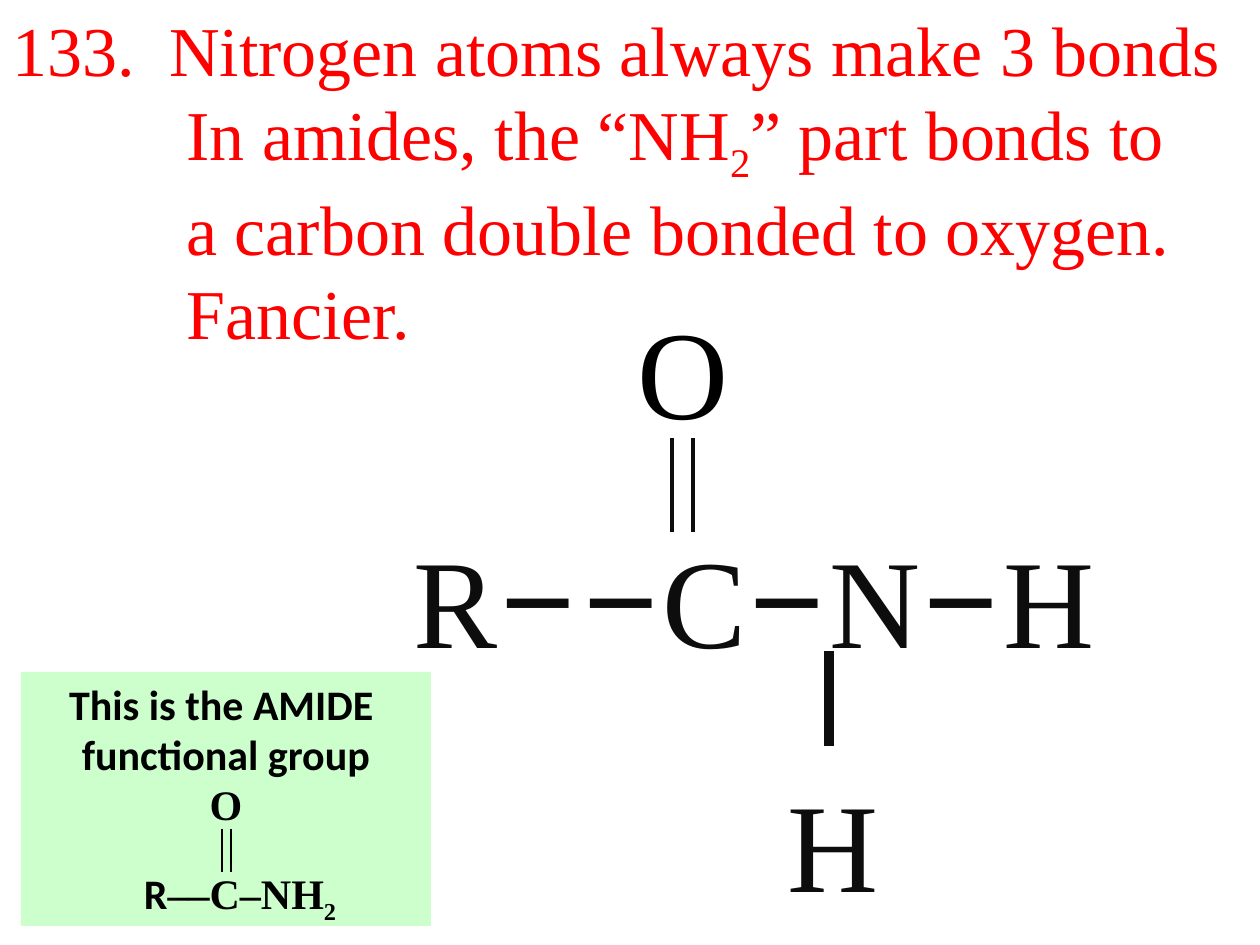
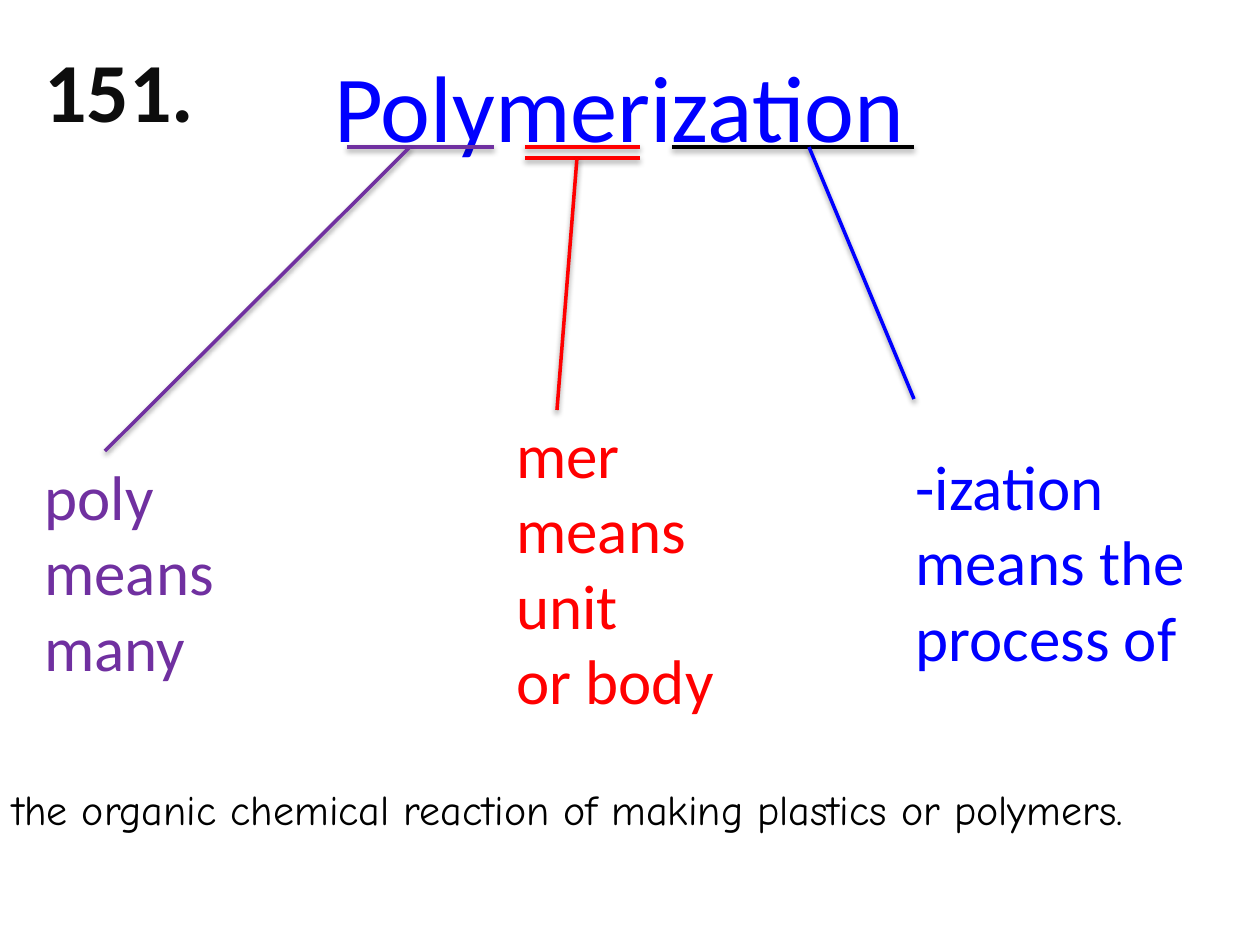
from lxml.etree import SubElement
from pptx import Presentation
from pptx.dml.color import RGBColor
from pptx.enum.shapes import MSO_CONNECTOR, MSO_SHAPE
from pptx.enum.text import MSO_ANCHOR, PP_ALIGN
from pptx.oxml.ns import qn
from pptx.util import Pt

PX = 914400 / 126
COLORS = {
    "red": "FF0000", "blue": "0000FF", "purple": "7030A0",
    "black": "000000", "ink": "0D0D0D", "mint": "CCFFCC",
}
SERIF, SANS, DASH, HAND = "Times New Roman", "Calibri", "Roboto", "Comic Neue"
SUB = {"sub": True}

RULE = [
    {"runs": ["133.\tNitrogen atoms always make 3 bonds"], "left": 157, "hang": 157},
    {"runs": ["In amides, the “NH", ("2", SUB), "” part bonds to"], "left": 174},
    {"runs": ["a carbon double bonded to oxygen."], "left": 174},
    {"runs": ["Fancier."], "left": 174},
]
CHAIN = [{"runs": ["R", ("––", {"font": DASH}), "C", ("–", {"font": DASH}),
                   "N", ("–", {"font": DASH}), "H"]}]
GROUP_CARD = [
    {"runs": ["This is the AMIDE "]},
    {"runs": ["functional group"]},
    {"runs": [("O", {"font": SERIF})]},
    {"runs": ["R", ("––C–NH", {"font": SERIF}), ("2", {"font": SERIF, "sub": True})],
     "left": 28, "before": 22},
]
AMIDE_BONDS = [
    ((829, 651), (829, 746), "ink", 6),
    ((222, 829), (222, 872), "black", 1.5),
    ((231, 829), (231, 872), "black", 1.5),
    ((672, 438), (672, 532), "ink", 2.25),
    ((693, 438), (693, 532), "ink", 2.25),
]

WORD_PARTS = [
    (["poly", "means many"], (32, 451, 336, 242), "purple"),
    (["mer", "means", "unit", "or body"], (504, 409, 252, 318), "red"),
    (["-ization", "means the", "process of"], (903, 441, 305, 242), "blue"),
]
WORD_LINES = [
    ((347, 147), (494, 147), "purple"),
    ((410, 147), (105, 451), "purple"),
    ((525, 147), (640, 147), "red"),
    ((525, 158), (640, 158), "red"),
    ((577, 158), (557, 410), "red"),
    ((672, 147), (914, 147), "black"),
    ((809, 147), (914, 399), "blue"),
]


def px(n):
    return round(n * PX)


def rgb(name):
    return RGBColor.from_string(COLORS[name])


def write(s, lines, box, size, font=SERIF, color="black", bold=False,
          align=PP_ALIGN.LEFT, fill=None):
    place = [px(n) for n in box]
    if fill:
        sp = s.shapes.add_shape(MSO_SHAPE.RECTANGLE, *place)
        sp.shadow.inherit = False
        sp.fill.solid()
        sp.fill.fore_color.rgb = rgb(fill)
        sp.line.fill.background()
    else:
        sp = s.shapes.add_textbox(*place)
    tf = sp.text_frame
    tf.word_wrap = True
    tf.vertical_anchor = MSO_ANCHOR.TOP
    for i, line in enumerate(lines):
        if isinstance(line, str):
            line = {"runs": [line]}
        p = tf.add_paragraph() if i else tf.paragraphs[0]
        p.alignment = align
        p.space_before = Pt(line.get("before", 0))
        pPr = p._p.get_or_add_pPr()
        pPr.set("marL", str(px(line.get("left", 0))))
        pPr.set("indent", str(-px(line.get("hang", 0))))
        for part in line["runs"]:
            text, fmt = (part, {}) if isinstance(part, str) else part
            r = p.add_run()
            r.text = text
            r.font.size = Pt(size)
            r.font.name = fmt.get("font", font)
            r.font.bold = bold
            r.font.color.rgb = rgb(color)
            if fmt.get("sub"):
                r.font._element.set("baseline", "-25000")


def draw_line(s, start, end, color, width=2, shadow=False):
    ln = s.shapes.add_connector(MSO_CONNECTOR.STRAIGHT, *[px(n) for n in start + end])
    ln.line.color.rgb = rgb(color)
    ln.line.width = Pt(width)
    effects = SubElement(ln._element.spPr, qn("a:effectLst"))
    if shadow:
        sh = SubElement(effects, qn("a:outerShdw"), blurRad="40000", dist="20000",
                        dir="5400000", rotWithShape="0")
        clr = SubElement(sh, qn("a:srgbClr"), val=COLORS["black"])
        SubElement(clr, qn("a:alpha"), val="38000")


def build_amide(s):
    write(s, RULE, (0, 0, 1260, 360), 40, color="red")
    write(s, CHAIN, (401, 516, 760, 165), 72, color="ink")
    write(s, ["H"], (775, 760, 120, 165), 72, color="ink")
    write(s, GROUP_CARD, (21, 672, 410, 254), 24, font=SANS, bold=True,
          align=PP_ALIGN.CENTER, fill="mint")
    write(s, ["O"], (625, 287, 120, 165), 72)
    for bond in AMIDE_BONDS:
        draw_line(s, *bond)


def build_polymerization(s):
    write(s, ["Polymerization "], (42, 42, 1176, 127), 54, font=SANS, color="blue",
          align=PP_ALIGN.CENTER)
    for line in WORD_LINES:
        draw_line(s, *line, shadow=True)
    for lines, box, color in WORD_PARTS:
        write(s, lines, box, 36, font=SANS, color=color)
    write(s, ["the organic chemical reaction of making plastics or polymers."],
          (0, 777, 1260, 165), 24, font=HAND)
    write(s, ["151."], (32, 32, 189, 115), 48, font=SANS, color="ink", bold=True)


def main():
    prs = Presentation()
    prs.slide_width, prs.slide_height = px(1260), px(945)
    for build in (build_amide, build_polymerization):
        build(prs.slides.add_slide(prs.slide_layouts[6]))
    prs.save("out.pptx")


if __name__ == "__main__":
    main()
